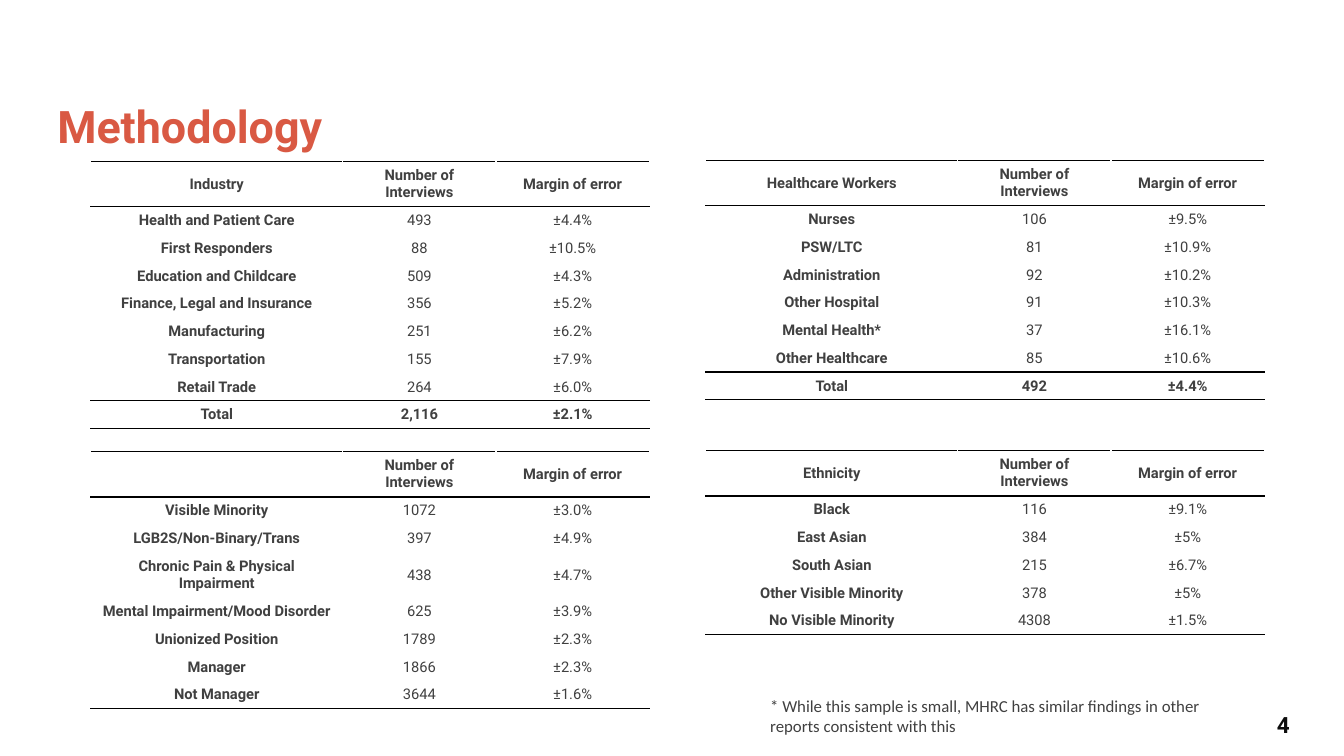
from lxml.etree import SubElement as Sub
from pptx import Presentation
from pptx.dml.color import RGBColor as RGB
from pptx.enum.text import MSO_ANCHOR as Anchor, PP_ALIGN as Align
from pptx.oxml.ns import qn
from pptx.util import Inches, Pt

INK = {"title": "D95943", "text": "404040", "page": "0D0D0D", "rule": "000000"}
WIDTHS = (2.5, 1.52, 1.52)
HEADS = ("Number of Interviews", "Margin of error")
LEFT, RIGHT = 0.9, 7

TRADES = [
    ("Health and Patient Care", "493", "±4.4%"),
    ("First Responders", "88", "±10.5%"),
    ("Education and Childcare", "509", "±4.3%"),
    ("Finance, Legal and Insurance", "356", "±5.2%"),
    ("Manufacturing", "251", "±6.2%"),
    ("Transportation", "155", "±7.9%"),
    ("Retail Trade", "264", "±6.0%"),
    ("Total", "2,116", "±2.1%"),
]
HEALTH = [
    ("Nurses", "106", "±9.5%"),
    ("PSW/LTC", "81", "±10.9%"),
    ("Administration", "92", "±10.2%"),
    ("Other Hospital", "91", "±10.3%"),
    ("Mental Health*", "37", "±16.1%"),
    ("Other Healthcare", "85", "±10.6%"),
    ("Total", "492", "±4.4%"),
]
GROUPS = [
    ("Visible Minority", "1072", "±3.0%"),
    ("LGB2S/Non-Binary/Trans", "397", "±4.9%"),
    ("Chronic Pain & Physical Impairment", "438", "±4.7%"),
    ("Mental Impairment/Mood Disorder", "625", "±3.9%"),
    ("Unionized Position", "1789", "±2.3%"),
    ("Manager", "1866", "±2.3%"),
    ("Not Manager", "3644", "±1.6%"),
]
ETHNIC = [
    ("Black", "116", "±9.1%"),
    ("East Asian", "384", "±5%"),
    ("South Asian", "215", "±6.7%"),
    ("Other Visible Minority", "378", "±5%"),
    ("No Visible Minority", "4308", "±1.5%"),
]


class Page:
    """Hold the style and the current slide, and draw its elements."""

    def __init__(self, slide):
        self.shapes = slide.shapes

    def label(self, frame, text, size, ink, bold=False, face="Roboto", align=Align.LEFT):
        para = frame.paragraphs[0]
        para.alignment = align
        font = para.font
        font.size, font.bold, font.name = Pt(size), bold, face
        font.color.rgb = RGB.from_string(INK[ink])
        if text:
            para.add_run().text = text
        return para

    def text(self, spot, words, size, ink, anchor=Anchor.TOP, **look):
        frame = self.shapes.add_textbox(*map(Inches, spot)).text_frame
        frame.word_wrap = True
        frame.vertical_anchor = anchor
        return self.label(frame, words, size, ink, **look)

    def rule(self, cell, side):
        line = Sub(cell._tc.get_or_add_tcPr(), qn(f"a:ln{side}"), w=str(Pt(1)))
        Sub(Sub(line, qn("a:solidFill")), qn("a:srgbClr"), val=INK["rule"])

    def table(self, left, top, name, body):
        rows = [(name, *HEADS), *body]
        count = len(rows)
        high = [0.44] + [0.27] * len(body)
        spot = map(Inches, (left, top, sum(WIDTHS), sum(high)))
        grid = self.shapes.add_table(count, len(WIDTHS), *spot).table
        grid.first_row = grid.horz_banding = False
        for col, width in zip(grid.columns, WIDTHS):
            col.width = Inches(width)
        for row, height in zip(grid.rows, high):
            row.height = Inches(height)
        edges = {0, 1, count}
        if body[-1][0] == "Total":
            edges.add(count - 1)
        for r, row in enumerate(rows):
            for c, words in enumerate(row):
                cell = grid.cell(r, c)
                cell.vertical_anchor = Anchor.MIDDLE
                for edge, side in ((r, "T"), (r + 1, "B")):
                    if edge in edges:
                        self.rule(cell, side)
                cell.fill.background()
                bold = c == 0 or r == 0 or row[0] == "Total"
                self.label(cell.text_frame, words, 10.5, "text", bold, align=Align.CENTER)


def main():
    deck = Presentation()
    deck.slide_width, deck.slide_height = Inches(13.33), Inches(7.5)
    page = Page(deck.slides.add_slide(deck.slide_layouts[6]))
    title = page.text((0.47, 0.55, 8.93, 1.45), "Methodology", 32, "title", Anchor.MIDDLE, bold=True)
    title.line_spacing = 0.9
    page.table(LEFT, 1.6, "Industry", TRADES)
    page.text((9.89, 7.01, 3, 0.4), "4", 16, "page", bold=True, align=Align.RIGHT)
    page.table(RIGHT, 1.59, "Healthcare Workers", HEALTH)
    page.table(LEFT, 4.48, "", GROUPS)
    page.table(RIGHT, 4.47, "Ethnicity", ETHNIC)
    note = "* While this sample is small, MHRC has similar findings in other reports consistent with this"
    page.text((7.54, 6.85, 4.99, 0.5), note, 12, "text", face="Calibri")
    deck.save("out.pptx")


if __name__ == "__main__":
    main()
